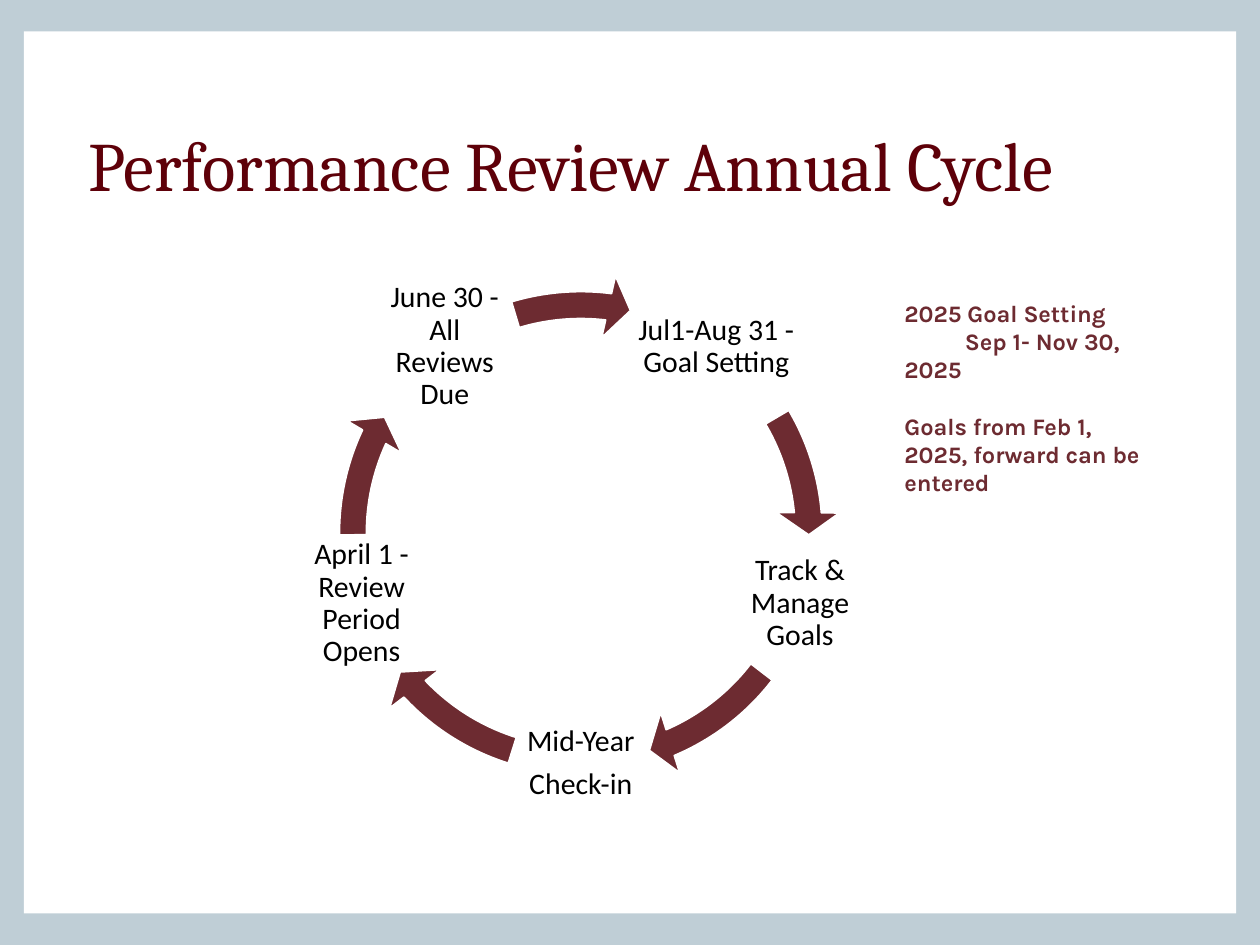
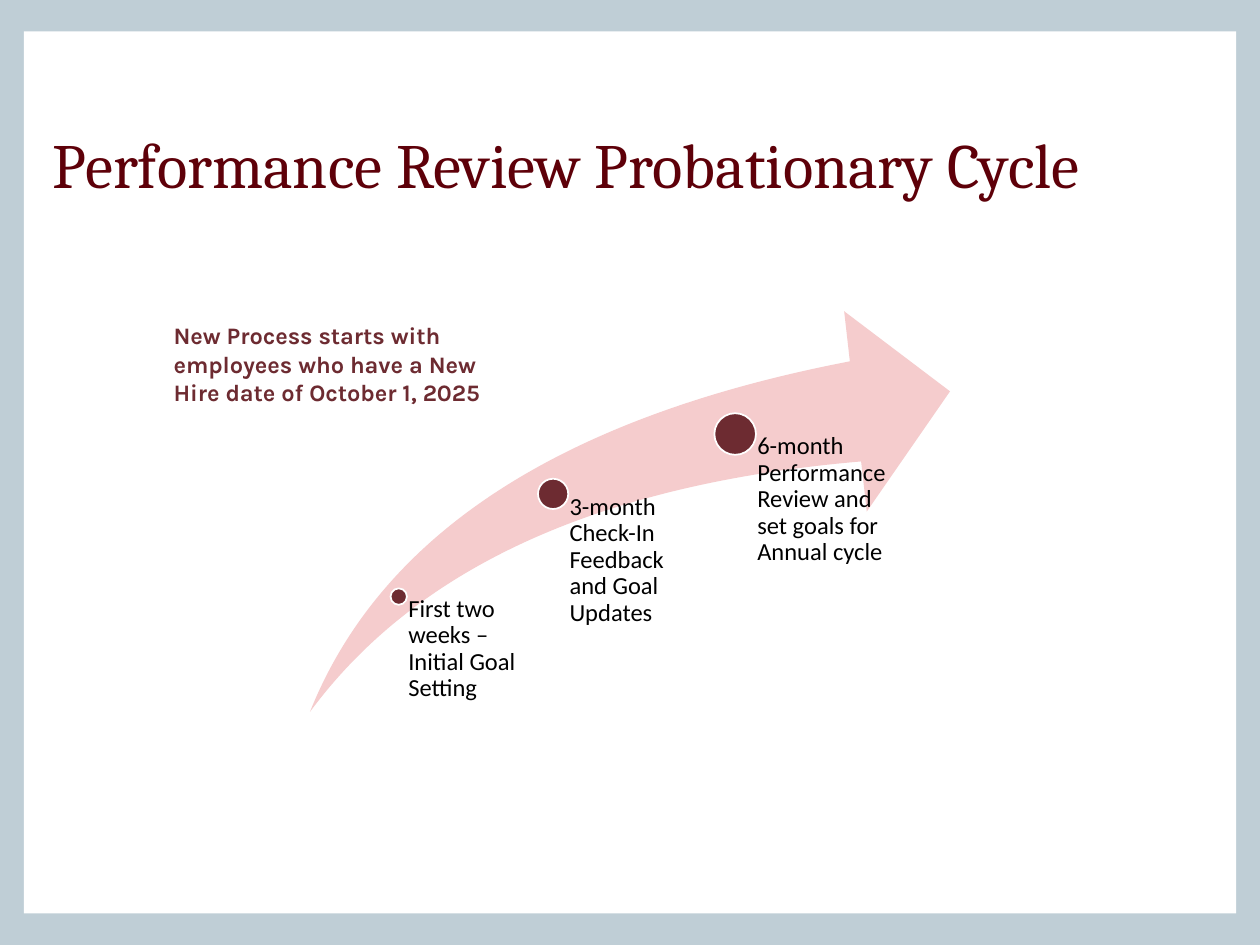
from pptx import Presentation
from pptx.dml.color import RGBColor
from pptx.enum.shapes import MSO_SHAPE
from pptx.enum.text import MSO_ANCHOR, PP_ALIGN
from pptx.util import Emu, Pt

RECT, OVAL = MSO_SHAPE.RECTANGLE, MSO_SHAPE.OVAL
CIRCULAR_ARROW, SWOOSH = MSO_SHAPE.CIRCULAR_ARROW, MSO_SHAPE.SWOOSH_ARROW
TOP, MIDDLE = MSO_ANCHOR.TOP, MSO_ANCHOR.MIDDLE
LEFT, CENTER = PP_ALIGN.LEFT, PP_ALIGN.CENTER

PX = 9144  # 100 px to the inch
COLORS = {
    "frame": "BFCED6",
    "paper": "FFFFFF",
    "title": "5E0009",
    "maroon": "6D2B31",
    "pink": "F5CCCD",
    "text": "000000",
}


def px(n):
    return Emu(n * PX)


def rgb(name):
    return RGBColor.from_string(COLORS[name])


class Deck:
    """Holds the shared style and the slide being drawn."""

    def __init__(self):
        self.prs = Presentation()
        self.prs.slide_width, self.prs.slide_height = px(1000), px(750)
        self.s = None

    def slide(self, title, left, width, size):
        self.s = self.prs.slides.add_slide(self.prs.slide_layouts[6])
        fill = self.s.background.fill
        fill.solid()
        fill.fore_color.rgb = rgb("frame")
        self.shape(RECT, (19, 25, 962, 700), "paper")
        self.text((left, 75, width, 110), [title], size, "Cambria", "title",
                  anchor=MIDDLE)

    def shape(self, kind, box, fill, outline=None, adjust=()):
        sp = self.s.shapes.add_shape(kind, *map(px, box))
        sp.shadow.inherit = False
        sp.fill.solid()
        sp.fill.fore_color.rgb = rgb(fill)
        if outline:
            sp.line.color.rgb = rgb(outline)
            sp.line.width = Pt(1)
        else:
            sp.line.fill.background()
        for i, value in enumerate(adjust):
            sp.adjustments[i] = value

    def text(self, box, lines, size, font, color, bold=False, align=LEFT,
             anchor=TOP, insets=(0, 0, 0, 0), spacing=1.0, after=0,
             before=None, indents=None):
        """before and indents map a paragraph number to points and px."""
        tf = self.s.shapes.add_textbox(*map(px, box)).text_frame
        tf.word_wrap = True
        tf.vertical_anchor = anchor
        (tf.margin_left, tf.margin_top,
         tf.margin_right, tf.margin_bottom) = map(px, insets)
        for i, line in enumerate(lines):
            p = tf.add_paragraph() if i else tf.paragraphs[0]
            p.text = line
            p.alignment = align
            p.line_spacing = spacing
            p.space_after = Pt(after)
            p.space_before = Pt((before or {}).get(i, 0))
            if i in (indents or {}):
                pPr = p._p.get_or_add_pPr()
                pPr.set("marL", "0")
                pPr.set("indent", str(px(indents[i])))
            p.font.size = Pt(size)
            p.font.name = font
            p.font.bold = bold
            p.font.color.rgb = rgb(color)

    def note(self, box, lines, **options):
        self.text(box, lines, 13.5, "Karla", "maroon", bold=True,
                  insets=(10, 5, 10, 5), **options)

    def cycle_label(self, box, lines, **options):
        self.text(box, lines, 17, "Calibri", "text", align=CENTER,
                  anchor=MIDDLE, insets=(2, 2, 2, 2), spacing=0.9, after=6,
                  **options)

    def cycle_arrow(self, end, start):
        self.shape(CIRCULAR_ARROW, (255, 217, 412, 412), "maroon", "paper",
                   (0.052, 3.36, end, start, 0.061))

    def milestone(self, dot, label_box, inset, label):
        left, top, size = dot
        self.shape(OVAL, (left, top, size, size), "maroon", "paper")
        self.text(label_box, [label], 14, "Calibri", "text",
                  insets=(inset, 0, 0, 0), spacing=0.9, after=5)


def annual_cycle(deck):
    deck.slide("Performance Review Annual Cycle", 70, 860, 39.6)

    # Stages, clockwise, each with the angles of the arrow nearby
    stages = [
        ((501, 220, 135, 110), ["Jul1-Aug 31 - Goal Setting"], (212.93, 197.67)),
        ((580, 424, 110, 110), ["Track & Manage Goals"], (40.14, 22.54)),
        ((406, 551, 110, 110), ["Mid-Year", "Check-in"], (82.1, 64.5)),
        ((232, 424, 110, 110), ["April 1 - Review Period Opens"], (122.97, 107.71)),
        ((298, 220, 110, 110), ["June 30 - All Reviews Due"], (166.19, 151.99)),
    ]
    for box, lines, angles in stages:
        deck.cycle_label(box, lines, indents={1: -10})
        deck.cycle_arrow(*angles)

    # Side note
    deck.note((708, 232, 209, 146),
              ["2025 Goal Setting", "Sep 1- Nov 30, 2025",
               "Goals from Feb 1, 2025, forward can be entered"],
              before={2: 16}, indents={1: 48})


def probationary_cycle(deck):
    deck.slide("Performance Review Probationary Cycle", 42, 888, 36)

    # Rising arrow with its milestones
    deck.shape(SWOOSH, (246, 247, 508, 318), "pink", adjust=(0.25, 0.25))
    deck.milestone((310, 467, 13), (317, 473, 118, 92), 7,
                   "First two weeks – Initial Goal Setting")
    deck.milestone((427, 380, 24), (439, 392, 122, 173), 13,
                   "3-month Check-In Feedback and Goal Updates")
    deck.milestone((567, 328, 33), (584, 344, 122, 221), 17,
                   "6-month Performance Review and set goals for Annual cycle")

    # Side note
    deck.note((128, 250, 280, 78),
              ["New Process starts with employees who have a New Hire date "
               "of October 1, 2025"])


def main():
    deck = Deck()
    annual_cycle(deck)
    probationary_cycle(deck)
    deck.prs.save("out.pptx")


if __name__ == "__main__":
    main()
